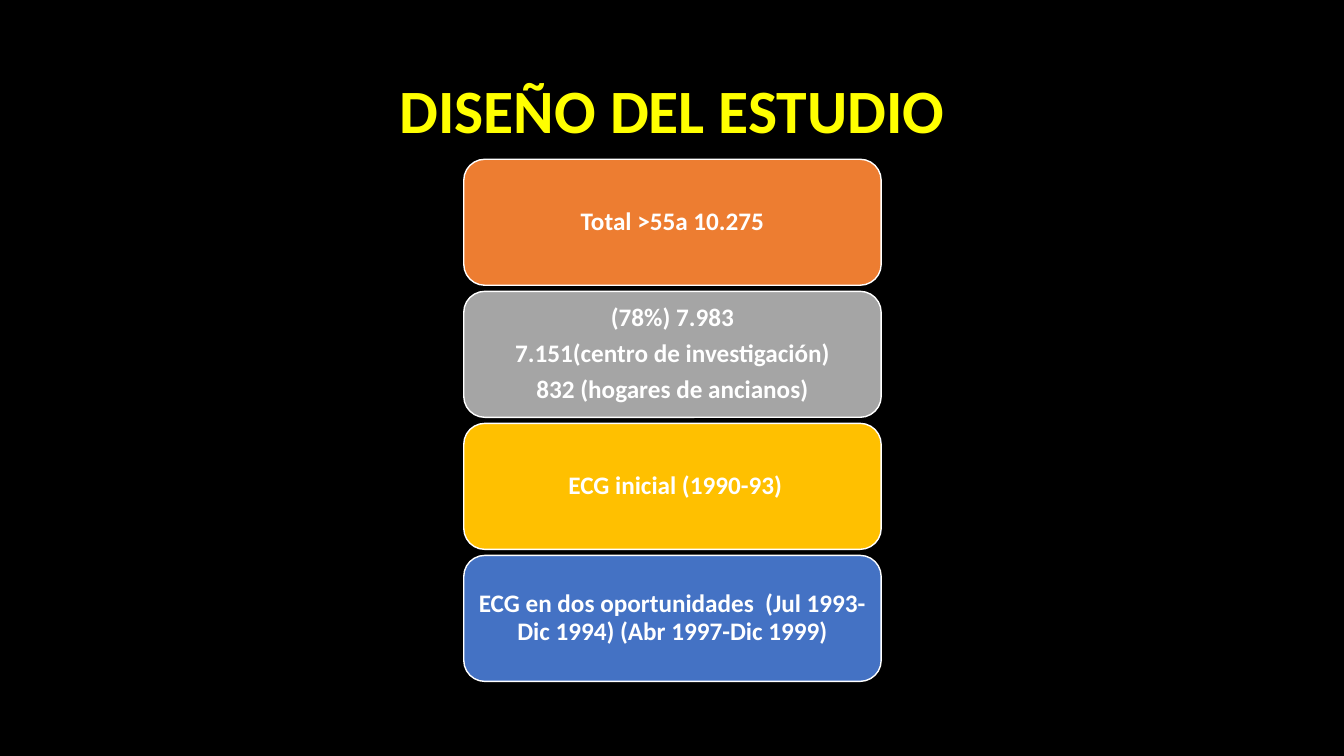
import pptx
import pptx.util
import pptx.dml.color
import pptx.enum.shapes
import pptx.enum.text

Inches = pptx.util.Inches
Pt = pptx.util.Pt


def tint(code):
    return pptx.dml.color.RGBColor.from_string(code)


class Deck:
    font = "Calibri"
    white = "FFFFFF"
    yellow = "FFFF00"

    def __init__(self, show):
        self.slide = show.slides.add_slide(show.slide_layouts[5])
        fill = self.slide.background.fill
        fill.solid()
        fill.fore_color.rgb = tint("000000")

    def label(self, frame, lines, size, color, after=0):
        """Each line is a list of (text, bold) runs."""
        frame.word_wrap = True
        frame.auto_size = pptx.enum.text.MSO_AUTO_SIZE.NONE
        frame.vertical_anchor = pptx.enum.text.MSO_ANCHOR.MIDDLE
        for i, line in enumerate(lines):
            para = frame.add_paragraph() if i else frame.paragraphs[0]
            para.alignment = pptx.enum.text.PP_ALIGN.CENTER
            para.line_spacing = 0.9
            para.space_before = Pt(0)
            para.space_after = Pt(after)
            for text, bold in line:
                run = para.add_run()
                run.text = text
                run.font.name = self.font
                run.font.size = Pt(size)
                run.font.bold = bold
                run.font.color.rgb = tint(color)

    def title(self, text, left, top, width, height):
        box = self.slide.shapes.title
        box.left, box.top = Inches(left), Inches(top)
        box.width, box.height = Inches(width), Inches(height)
        self.label(box.text_frame, [[(text, True)]], 44, self.yellow)

    def card(self, lines, color, left, top, width, height):
        box = self.slide.shapes.add_shape(
            pptx.enum.shapes.MSO_SHAPE.ROUNDED_RECTANGLE,
            Inches(left), Inches(top), Inches(width), Inches(height))
        box.shadow.inherit = False
        box.fill.solid()
        box.fill.fore_color.rgb = tint(color)
        box.line.color.rgb = tint(self.white)
        box.line.width = Pt(1)
        frame = box.text_frame
        # The rounded corners add 0.06 inches of inset on each side
        frame.margin_left = frame.margin_right = Inches(0.07)
        frame.margin_top = frame.margin_bottom = Inches(0.04)
        self.label(frame, lines, 18, self.white, 6.3)


def main():
    show = pptx.Presentation()
    show.slide_width, show.slide_height = Inches(13.33), Inches(7.5)
    deck = Deck(show)

    # Title
    deck.title("DISEÑO DEL ESTUDIO", 0.92, 0.4, 11.5, 1.45)

    # Study stages, stacked from top to bottom
    stages = [
        ("ED7D31", [[("Total >55a 10.275", True)]]),
        ("A5A5A5", [[("(78%) 7.983", True)],
                    [("7.151(centro de investigación)", True)],
                    [("832 (hogares de ancianos)", True)]]),
        ("FFC000", [[(" ", False), ("ECG inicial (1990-93)", True)]]),
        ("4472C4", [[("ECG en dos oportunidades  (Jul 1993- Dic 1994) "
                      "(Abr 1997-Dic 1999)", True)]]),
    ]
    for i, (color, lines) in enumerate(stages):
        deck.card(lines, color, 4.6, 1.58 + i * 1.31, 4.14, 1.25)

    show.save("out.pptx")


if __name__ == "__main__":
    main()
